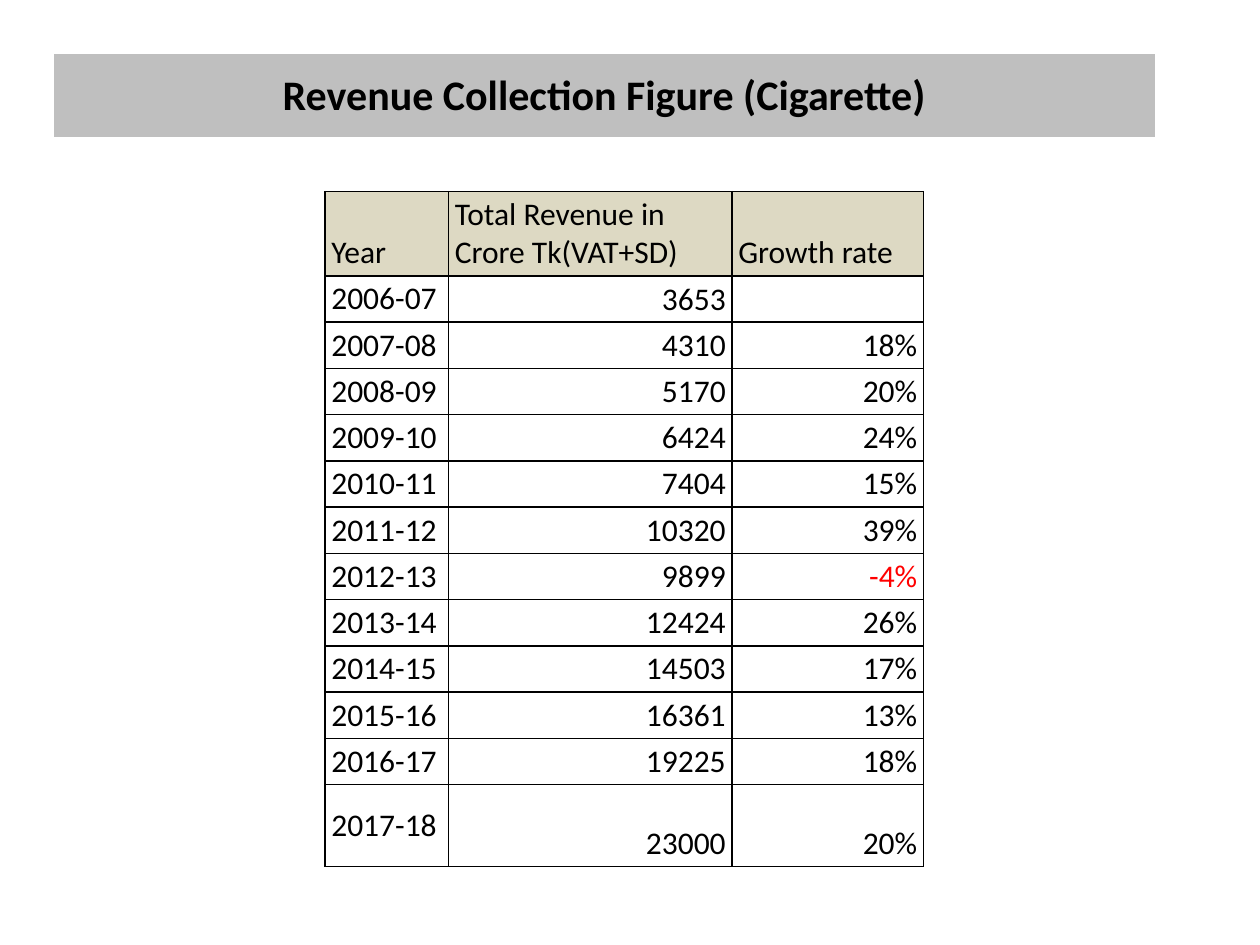
from dataclasses import dataclass
from typing import Optional

from lxml.etree import SubElement
from pptx import Presentation
from pptx.dml.color import RGBColor
from pptx.enum.text import MSO_ANCHOR, PP_ALIGN
from pptx.oxml.ns import qn
from pptx.util import Inches, Pt


@dataclass(frozen=True)
class Theme:
    font: str = "Calibri"
    title_size: int = 24
    body_size: int = 18
    ink: str = "000000"
    negative: str = "FF0000"
    banner: str = "BFBFBF"
    header: str = "DDD9C3"
    paper: str = "FFFFFF"
    border: float = 1


@dataclass(frozen=True)
class Revenue:
    year: str
    total: int
    growth: Optional[int] = None


THEME = Theme()
HEADERS = ("Year", "Total Revenue in Crore Tk(VAT+SD)", "Growth rate")
REVENUES = (
    Revenue("2006-07", 3653),
    Revenue("2007-08", 4310, 18),
    Revenue("2008-09", 5170, 20),
    Revenue("2009-10", 6424, 24),
    Revenue("2010-11", 7404, 15),
    Revenue("2011-12", 10320, 39),
    Revenue("2012-13", 9899, -4),
    Revenue("2013-14", 12424, 26),
    Revenue("2014-15", 14503, 17),
    Revenue("2015-16", 16361, 13),
    Revenue("2016-17", 19225, 18),
    Revenue("2017-18", 23000, 20),
)


def write(tf, text: str, size: int = THEME.body_size, color: str = THEME.ink,
          bold: bool = False, align=PP_ALIGN.LEFT) -> None:
    p = tf.paragraphs[0]
    p.alignment = align
    p.font.size = Pt(size)
    if text:
        r = p.add_run()
        r.text = text
        r.font.name = THEME.font
        r.font.size = Pt(size)
        r.font.bold = bold
        r.font.color.rgb = RGBColor.from_string(color)


def add_grid(s, left: float, top: float, cols: tuple, rows: tuple):
    shape = s.shapes.add_table(len(rows), len(cols), Inches(left), Inches(top),
                               Inches(sum(cols)), Inches(sum(rows)))
    table = shape.table
    table.first_row = False
    table.horz_banding = False
    for col, width in zip(table.columns, cols):
        col.width = Inches(width)
    for row, height in zip(table.rows, rows):
        row.height = Inches(height)
    return table


def style_cell(cell, fill: str, anchor, margins: tuple) -> None:
    cell.fill.solid()
    cell.fill.fore_color.rgb = RGBColor.from_string(fill)
    cell.vertical_anchor = anchor
    cell.margin_left, cell.margin_top, cell.margin_right, cell.margin_bottom = (
        Inches(m) for m in margins)


def add_borders(cell) -> None:
    tc_pr = cell._tc.get_or_add_tcPr()
    for side in ("a:lnL", "a:lnR", "a:lnT", "a:lnB"):
        ln = SubElement(tc_pr, qn(side), w=str(Pt(THEME.border)))
        fill = SubElement(ln, qn("a:solidFill"))
        SubElement(fill, qn("a:srgbClr"), val=THEME.ink)


def add_banner(s, text: str) -> None:
    cell = add_grid(s, 0.42, 0.42, (8.75,), (0.67,)).cell(0, 0)
    style_cell(cell, THEME.banner, MSO_ANCHOR.MIDDLE, (0.01, 0.01, 0.01, 0))
    write(cell.text_frame, text, size=THEME.title_size, bold=True,
          align=PP_ALIGN.CENTER)


def add_revenue_table(s, revenues: tuple) -> None:
    heights = (0.67,) + (0.367,) * (len(revenues) - 1) + (0.65,)
    table = add_grid(s, 2.58, 1.52, (0.98, 2.25, 1.52), heights)
    records = [HEADERS] + [
        (v.year, str(v.total), "" if v.growth is None else f"{v.growth}%")
        for v in revenues]
    for i, record in enumerate(records):
        for j, text in enumerate(record):
            cell = table.cell(i, j)
            is_header = i == 0
            is_year = j == 0
            add_borders(cell)
            style_cell(cell, THEME.header if is_header else THEME.paper,
                       MSO_ANCHOR.MIDDLE if is_year and not is_header
                       else MSO_ANCHOR.BOTTOM, (0.05, 0.03, 0.05, 0.03))
            write(cell.text_frame, text,
                  color=THEME.negative if text.startswith("-") else THEME.ink,
                  align=PP_ALIGN.LEFT if is_header or is_year
                  else PP_ALIGN.RIGHT)


def main() -> None:
    prs = Presentation()
    prs.slide_width, prs.slide_height = Inches(10), Inches(7.5)
    s = prs.slides.add_slide(prs.slide_layouts[6])
    add_revenue_table(s, REVENUES)
    add_banner(s, "Revenue Collection Figure (Cigarette)")
    prs.save("out.pptx")


if __name__ == "__main__":
    main()
